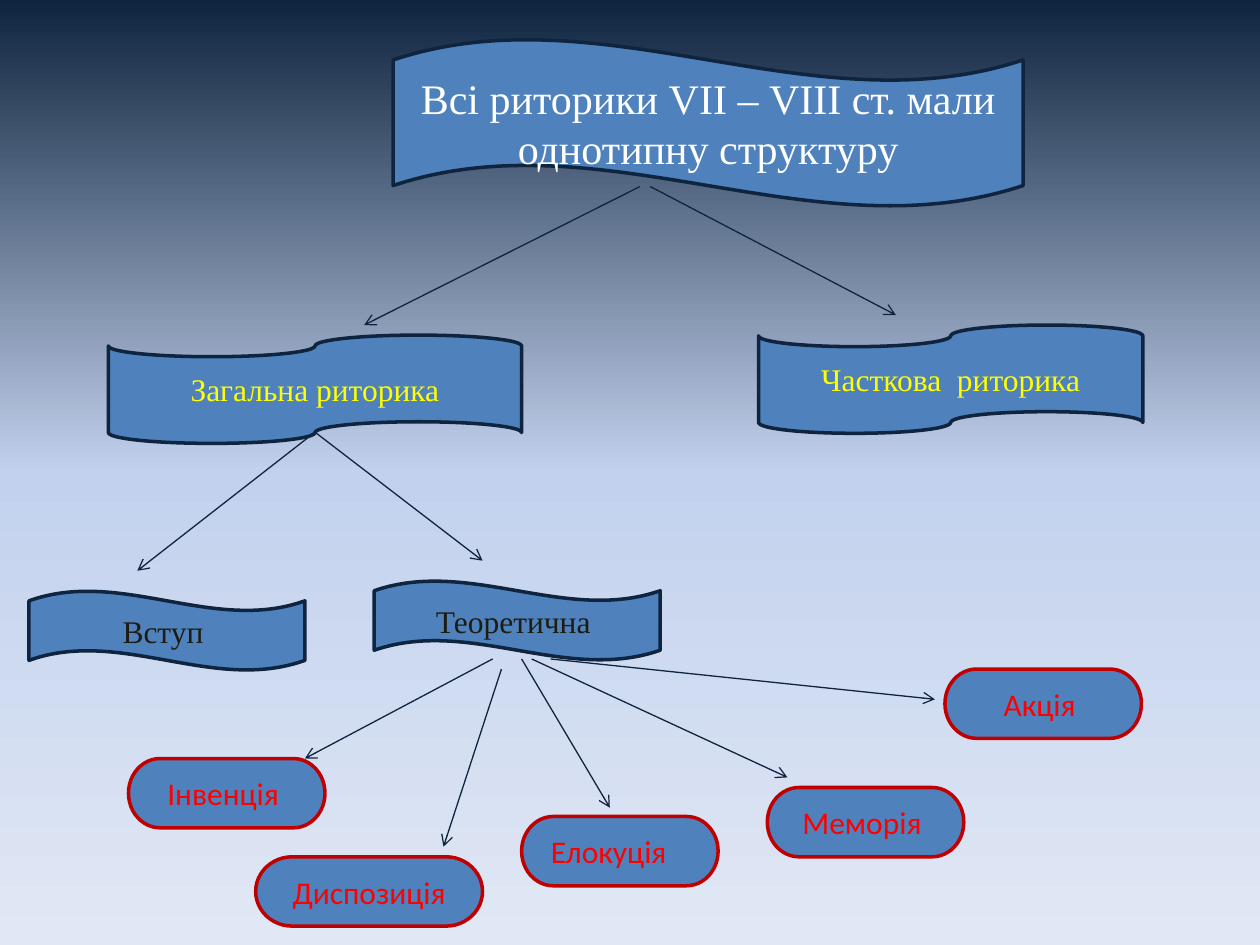
from copy import deepcopy

from pptx import Presentation
from pptx.dml.color import RGBColor
from pptx.enum.shapes import MSO_CONNECTOR as Link, MSO_SHAPE as Preset
from pptx.enum.text import MSO_ANCHOR as Anchor, MSO_AUTO_SIZE as AutoSize, PP_ALIGN as Align
from pptx.oxml.ns import qn
from pptx.util import Inches, Pt

THEME = {
    "background": [(0, "0F243E"), (0.5, "C2D1ED"), (1, "E1E8F5")],
    "fill": "4F81BD",
    "navy": "0F243E",
    "crimson": "C00000",
    "white": "FFFFFF",
    "yellow": "FFFF00",
    "dark": "1E1C11",
    "red": "FF0000",
    "serif": "Times New Roman",
    "sans": "Calibri",
    "title_size": 24,
    "label_size": 18,
    "outline": 2,
    "arrow": 0.75,
}

TITLE = "Всі риторики VІІ – VІІІ ст. мали однотипну структуру"
TITLE_BOX = (3.12, 0.31, 5, 1.33)
GENERAL = "Загальна риторика"

BRANCHES = [
    (GENERAL, (0.86, 2.66, 3.28, 0.86)),
    ("Часткова  риторика", (6.02, 2.58, 3.05, 0.86)),
]
SECTIONS = [
    ("Вступ ", (0.23, 4.69, 2.19, 0.63)),
    ("Теоретична ", (2.97, 4.61, 2.27, 0.63)),
]
CANONS = [
    ("Інвенція ", (1.02, 6.02), 1.56, 0.1),
    ("Диспозиція", (2.03, 6.8), 1.8, 0.1),
    ("Елокуція ", (4.14, 6.48), 1.56, 0.22),
    ("Меморія ", (6.09, 6.25), 1.56, 0.1),
    ("Акція ", (7.5, 5.31), 1.56, 0.1),
]
CANON_HEIGHT = 0.55

ARROWS = [
    ((5.08, 1.48), (2.89, 2.58)),
    ((5.16, 1.48), (7.11, 2.5)),
    ((3.91, 5.23), (2.42, 6.02)),
    ((3.98, 5.31), (3.52, 6.72)),
    ((4.14, 5.23), (4.84, 6.41)),
    ((4.22, 5.23), (6.25, 6.17)),
    ((4.37, 5.23), (7.42, 5.55)),
]
GENERAL_FOOT = (2.5, 3.43)
GENERAL_ENDS = [(1.09, 4.53), (3.83, 4.45)]


def color(name):
    return RGBColor.from_string(THEME[name])


def write(holder, text, font="serif", size="label_size", ink="white", right=0.1):
    frame = holder.text_frame
    frame.word_wrap = True
    frame.auto_size = AutoSize.NONE
    frame.vertical_anchor = Anchor.MIDDLE
    frame.margin_right = Inches(right)
    paragraph = frame.paragraphs[0]
    paragraph.alignment = Align.CENTER
    run = paragraph.add_run()
    run.text = text
    run.font.name = THEME[font]
    run.font.size = Pt(THEME[size])
    run.font.color.rgb = color(ink)


def add_banner(slide, preset, box, outline="navy"):
    banner = slide.shapes.add_shape(preset, *map(Inches, box))
    banner.shadow.inherit = False
    banner.fill.solid()
    banner.fill.fore_color.rgb = color("fill")
    banner.line.color.rgb = color(outline)
    banner.line.width = Pt(THEME["outline"])
    return banner


def add_arrow(slide, start, end, source=None):
    arrow = slide.shapes.add_connector(Link.STRAIGHT, *map(Inches, start + end))
    if source is not None:
        arrow.begin_connect(source, 2)
        arrow.begin_x, arrow.begin_y = map(Inches, start)
    arrow.line.color.rgb = color("navy")
    arrow.line.width = Pt(THEME["arrow"])
    head = arrow.line._get_or_add_ln().makeelement(qn("a:tailEnd"), {"type": "arrow"})
    arrow.line._get_or_add_ln().append(head)
    properties = arrow._element.spPr
    properties.append(properties.makeelement(qn("a:effectLst"), {}))


def paint_background(slide):
    fill = slide.background.fill
    fill.gradient()
    fill.gradient_angle = 270
    stop_list = slide._element.find(".//" + qn("a:gsLst"))
    stop_list.append(deepcopy(stop_list[0]))
    for stop, (position, tint) in zip(fill.gradient_stops, THEME["background"]):
        stop.position = position
        stop.color.rgb = RGBColor.from_string(tint)


def main():
    deck = Presentation()
    deck.slide_width, deck.slide_height = Inches(10), Inches(7.5)
    slide = deck.slides.add_slide(deck.slide_layouts[5])
    paint_background(slide)

    title_wave = add_banner(slide, Preset.WAVE, TITLE_BOX)
    title = slide.shapes.title
    title.left, title.top, title.width, title.height = map(Inches, TITLE_BOX)
    write(title, TITLE, size="title_size")
    title_wave._element.addnext(title._element)

    branch_tapes = {}
    for label, box in BRANCHES:
        branch_tapes[label] = add_banner(slide, Preset.FLOWCHART_PUNCHED_TAPE, box)
        write(branch_tapes[label], label, ink="yellow")

    for label, box in SECTIONS:
        write(add_banner(slide, Preset.WAVE, box), label, ink="dark")

    for start, end in ARROWS:
        add_arrow(slide, start, end)
    for end in GENERAL_ENDS:
        add_arrow(slide, GENERAL_FOOT, end, source=branch_tapes[GENERAL])

    for label, corner, width, right in CANONS:
        box = corner + (width, CANON_HEIGHT)
        canon = add_banner(slide, Preset.FLOWCHART_TERMINATOR, box, outline="crimson")
        write(canon, label, font="sans", ink="red", right=right)

    deck.save("out.pptx")


if __name__ == "__main__":
    main()
